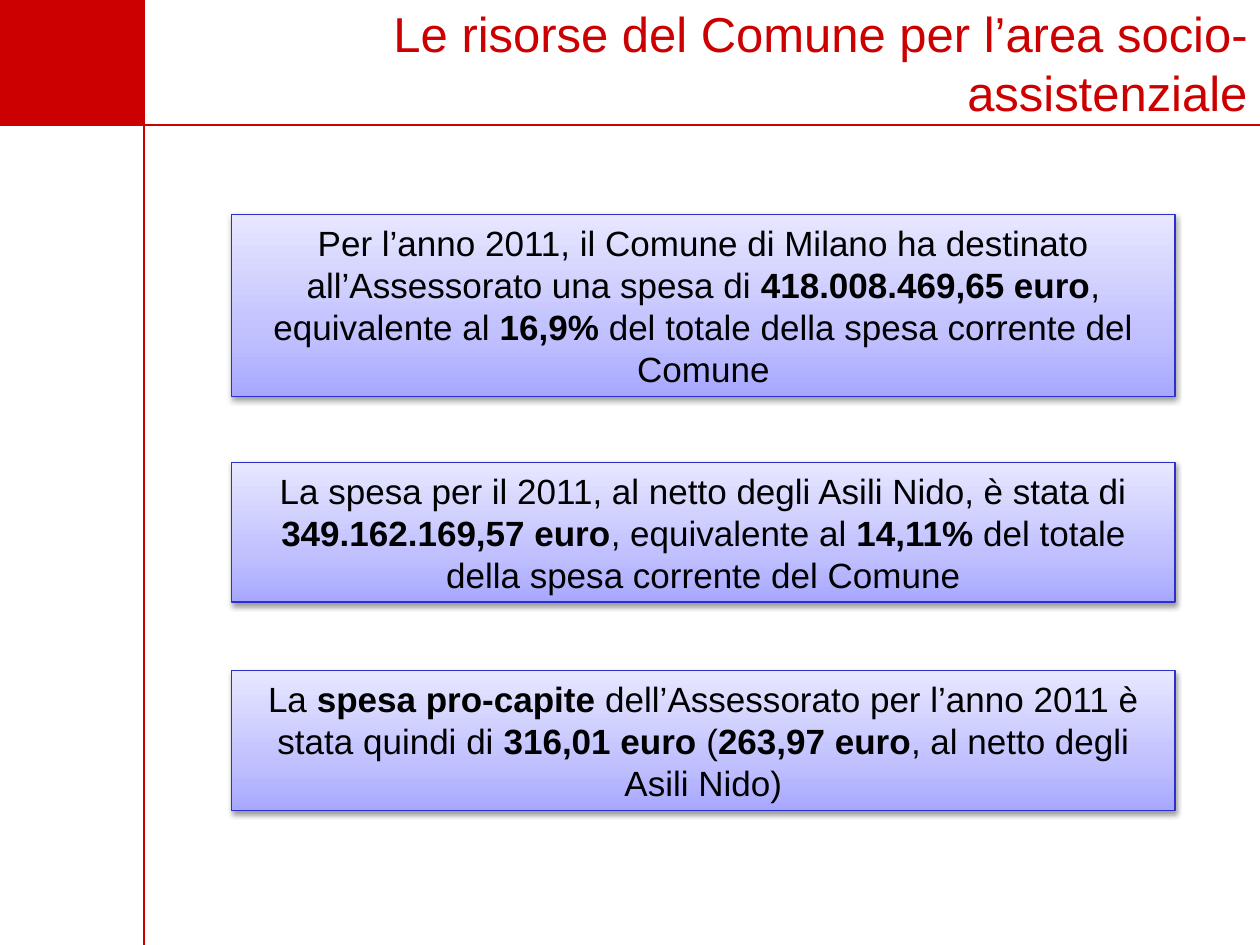
from lxml import etree
from pptx import Presentation
from pptx.dml.color import RGBColor
from pptx.enum.shapes import MSO_CONNECTOR, MSO_SHAPE
from pptx.enum.text import MSO_ANCHOR, PP_ALIGN
from pptx.oxml import parse_xml
from pptx.oxml.ns import qn
from pptx.util import Cm, Pt

RECTANGLE = MSO_SHAPE.RECTANGLE
STRAIGHT = MSO_CONNECTOR.STRAIGHT
MIDDLE = MSO_ANCHOR.MIDDLE
CENTER, RIGHT = PP_ALIGN.CENTER, PP_ALIGN.RIGHT

RED = "CC0000"
WIDTH, HEIGHT = 25.4, 19.05
SIDE, BAND = 2.9, 2.52

GRADIENT = """<a:gradFill rotWithShape="1"
  xmlns:a="http://schemas.openxmlformats.org/drawingml/2006/main"><a:gsLst>
  <a:gs pos="0"><a:srgbClr val="A7A7FF"/></a:gs>
  <a:gs pos="35000"><a:srgbClr val="C1C1FF"/></a:gs>
  <a:gs pos="100000"><a:srgbClr val="E7E7FF"/></a:gs>
</a:gsLst><a:lin ang="16200000" scaled="1"/></a:gradFill>"""
SHADOW = """<a:outerShdw blurRad="40000" dist="20000" dir="5400000" rotWithShape="0"
  xmlns:a="http://schemas.openxmlformats.org/drawingml/2006/main">
  <a:srgbClr val="000000"><a:alpha val="38000"/></a:srgbClr></a:outerShdw>"""

# Top, height and (text, bold) parts of each box
BOXES = [
    (4.32, 3.68, [
        ("Per l’anno 2011, il Comune di Milano ha destinato all’Assessorato una spesa di ", False),
        ("418.008.469,65 euro", True), (", equivalente al ", False), ("16,9%", True),
        (" del totale della spesa corrente del Comune", False)]),
    (9.32, 2.82, [
        ("La spesa per il 2011, al netto degli Asili Nido, è stata di ", False),
        ("349.162.169,57 euro", True), (", equivalente al ", False), ("14,11%", True),
        (" del totale della spesa corrente del Comune", False)]),
    (13.52, 2.82, [
        ("La ", False), ("spesa pro-capite ", True),
        ("dell’Assessorato per l’anno 2011 è stata quindi di ", False),
        ("316,01 euro ", True), ("(", False), ("263,97 euro", True),
        (", al netto degli Asili Nido)", False)]),
]


def color(value):
    return RGBColor.from_string(value)


def style(span, size, value, bold=False):
    span.font.size = Pt(size)
    span.font.name = "Arial"
    span.font.bold = bold
    span.font.color.rgb = color(value)


deck = Presentation()
deck.slide_width, deck.slide_height = Cm(WIDTH), Cm(HEIGHT)
page = deck.slides.add_slide(deck.slide_layouts[5])

# Plain red corner
corner = page.shapes.add_shape(RECTANGLE, 0, 0, Cm(SIDE), Cm(BAND))
corner.shadow.inherit = False
corner.fill.solid()
corner.fill.fore_color.rgb = color(RED)
corner.line.fill.background()

# Red rules
for x1, y1, x2, y2 in [(0, BAND, WIDTH, BAND), (SIDE, HEIGHT, SIDE, 0)]:
    rule = page.shapes.add_connector(STRAIGHT, Cm(x1), Cm(y1), Cm(x2), Cm(y2))
    rule.line.color.rgb = color(RED)
    rule.line.width = Pt(1.5)
    etree.SubElement(rule._element.spPr, qn("a:effectLst"))

# Title
title = page.shapes.title
title.left, title.top = Cm(SIDE), 0
title.width, title.height = Cm(WIDTH - SIDE), Cm(BAND)
title.text_frame.text = "Le risorse del Comune per l’area socio-assistenziale"
title.text_frame.vertical_anchor = MIDDLE
para = title.text_frame.paragraphs[0]
para.alignment = RIGHT
style(para.runs[0], 28, RED)

# Spending boxes
for top, height, parts in BOXES:
    box = page.shapes.add_shape(RECTANGLE, Cm(4.67), Cm(top), Cm(19.02), Cm(height))
    box.line.color.rgb = color("2E2ECB")
    box.line.width = Pt(0.75)
    box.shadow.inherit = False
    properties = box._element.spPr
    properties.find(qn("a:prstGeom")).addnext(parse_xml(GRADIENT))
    properties.find(qn("a:effectLst")).append(parse_xml(SHADOW))
    box.text_frame.word_wrap = True
    box.text_frame.vertical_anchor = MIDDLE
    para = box.text_frame.paragraphs[0]
    para.alignment = CENTER
    for text, bold in parts:
        span = para.add_run()
        span.text = text
        style(span, 20, "000000", bold)

deck.save("out.pptx")
